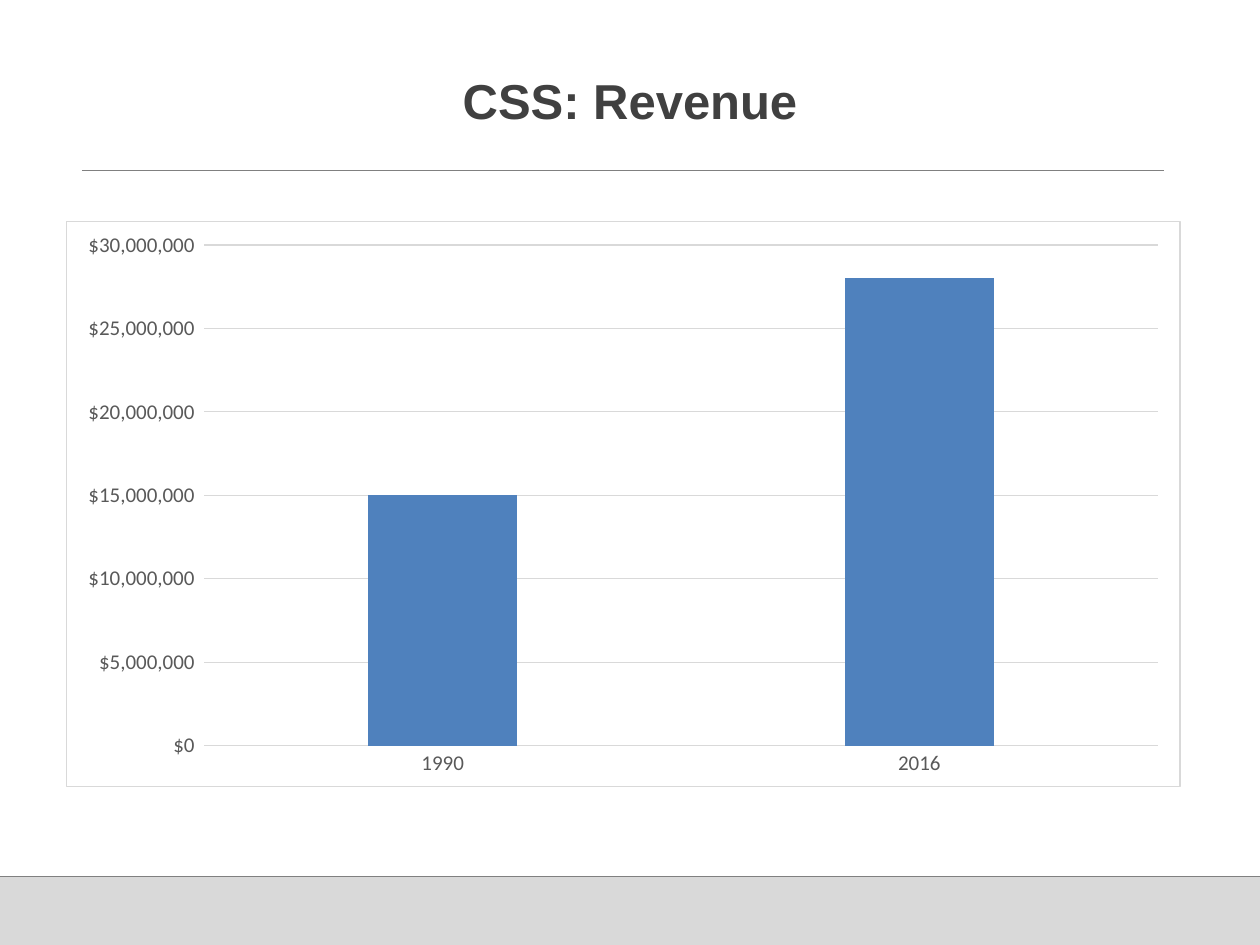
from lxml import etree
from pptx import Presentation
from pptx import util as u
from pptx.chart.data import CategoryChartData
from pptx.dml.color import RGBColor
from pptx.enum import chart as charts, shapes, text
from pptx.oxml import parse_xml
from pptx.oxml.ns import nsdecls, qn

WHITE = RGBColor(0xFF, 0xFF, 0xFF)
LIGHT = RGBColor(0xD9, 0xD9, 0xD9)
GRAY = RGBColor(0x80, 0x80, 0x80)
LABEL = RGBColor(0x59, 0x59, 0x59)
DARK = RGBColor(0x40, 0x40, 0x40)
BLUE = RGBColor(0x4F, 0x81, 0xBD)

deck = Presentation()
deck.slide_width = u.Inches(10)
deck.slide_height = u.Inches(7.5)
page = deck.slides.add_slide(deck.slide_layouts[6])

footer = page.shapes.add_shape(
    shapes.MSO_SHAPE.RECTANGLE, u.Inches(0), u.Inches(6.96), u.Inches(10), u.Inches(0.54)
)
footer.shadow.inherit = False
footer.fill.solid()
footer.fill.fore_color.rgb = LIGHT
footer.line.fill.background()

for left, right, top in ((0, 10, 6.96), (0.65, 9.24, 1.35)):
    rule = page.shapes.add_connector(
        shapes.MSO_CONNECTOR.STRAIGHT,
        u.Inches(left), u.Inches(top), u.Inches(right), u.Inches(top),
    )
    rule.line.color.rgb = GRAY
    rule.line.width = u.Pt(0.5)
    etree.SubElement(rule.element.spPr, qn("a:effectLst"))

box = page.shapes.add_textbox(u.Inches(0.5), u.Inches(0.3), u.Inches(9), u.Inches(0.99))
frame = box.text_frame
frame.word_wrap = True
frame.vertical_anchor = text.MSO_ANCHOR.MIDDLE
para = frame.paragraphs[0]
para.alignment = text.PP_ALIGN.CENTER
span = para.add_run()
span.text = "CSS: Revenue"
span.font.name = "Arial"
span.font.size = u.Pt(28)
span.font.bold = True
span.font.color.rgb = DARK

revenue = CategoryChartData()
revenue.categories = ["1990", "2016"]
revenue.add_series("Series 1", [15000000, 28000000])
chart = page.shapes.add_chart(
    charts.XL_CHART_TYPE.COLUMN_CLUSTERED,
    u.Inches(0.52), u.Inches(1.75), u.Inches(8.85), u.Inches(4.5), revenue,
).chart
chart.has_legend = False
chart.has_title = False
chart.font.name = "Calibri"
chart.font.size = u.Pt(10)

plot = chart.plots[0]
plot.gap_width = 219
plot.overlap = -27
plot.vary_by_categories = False
bars = plot.series[0].format
bars.fill.solid()
bars.fill.fore_color.rgb = BLUE

years, dollars = chart.category_axis, chart.value_axis
for axis in (years, dollars):
    axis.major_tick_mark = charts.XL_TICK_MARK.NONE
    axis.minor_tick_mark = charts.XL_TICK_MARK.NONE
    axis.tick_labels.font.name = "Calibri"
    axis.tick_labels.font.size = u.Pt(12)
    axis.tick_labels.font.color.rgb = LABEL

dollars.minimum_scale = 0
dollars.maximum_scale = 30000000
dollars.major_unit = 5000000
dollars.has_major_gridlines = True
dollars.format.line.fill.background()
dollars.tick_labels.number_format = '"$"#,##0_);[Red]\\("$"#,##0\\)'
dollars.tick_labels.number_format_is_linked = False
for line in (years.format.line, dollars.major_gridlines.format.line):
    line.color.rgb = LIGHT
    line.width = u.Pt(0.75)

border = parse_xml(
    f'<c:spPr {nsdecls("c", "a")}>'
    f'<a:solidFill><a:srgbClr val="{WHITE}"/></a:solidFill>'
    f'<a:ln w="{u.Pt(0.75)}"><a:solidFill><a:srgbClr val="{LIGHT}"/></a:solidFill></a:ln>'
    "</c:spPr>"
)
chart.element.find(qn("c:chart")).addnext(border)

deck.save("out.pptx")
